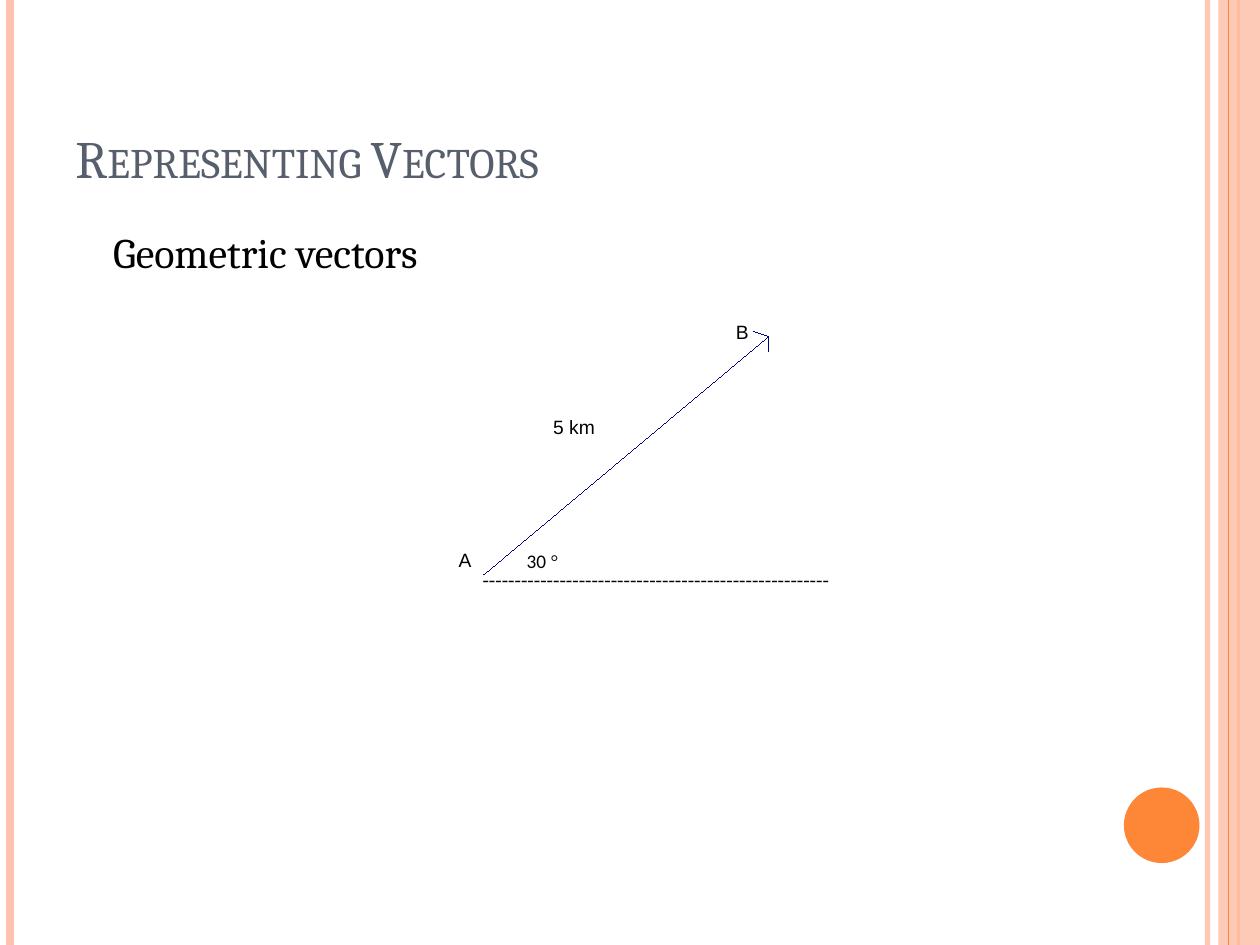
"""Build the slide on geometric vectors."""
from dataclasses import dataclass

from lxml import etree
from pptx import Presentation
from pptx.dml.color import RGBColor
from pptx.enum.shapes import MSO_CONNECTOR, MSO_SHAPE
from pptx.enum.text import MSO_ANCHOR
from pptx.oxml.ns import qn
from pptx.util import Inches, Pt

STRAIGHT = MSO_CONNECTOR.STRAIGHT
RECTANGLE, OVAL = MSO_SHAPE.RECTANGLE, MSO_SHAPE.OVAL
TOP, BOTTOM = MSO_ANCHOR.TOP, MSO_ANCHOR.BOTTOM

CELL = Inches(0.1)
COLUMNS, ROWS = 100, 75
HAIRLINE = 0.01
PEACH, ORANGE, NAVY, SLATE, BLACK = "FEC3AE", "FE8637", "000080", "575F6D", "000000"
ARROW_TAIL, ARROW_TIP = (38.4, 45.6), (61, 26.7)
BARB_ENDS = ((59.8, 26.3), (61, 27.9))


@dataclass
class Stripe:
    column: float
    color: str
    width: float
    opacity: int = 100


@dataclass
class Label:
    box: tuple[float, float, float, float]
    runs: tuple[tuple[str, str], ...]
    size: float = 11
    color: str = BLACK
    anchor: int = TOP
    framed: bool = False
    small_caps: bool = False
    indent: float = 0
    space_before: float = 0


BACK_STRIPES = (
    Stripe(95.83, PEACH, 3, 93),
    Stripe(0.83, PEACH, 4.5),
    Stripe(98.3, ORANGE, 1.5),
)
FRONT_STRIPE = Stripe(97.5, ORANGE, 0.75)
LABELS = (
    Label((43.9, 33, 5, 3.4), (("5 km", "Arial"),)),
    Label((58.4, 25.4, 2, 3.4), (("B", "Arial"),)),
    Label((36.4, 43.5, 2, 3.4), (("A", "Arial"),)),
    Label((41.8, 43.6, 5, 5), (("30 ", "Calibri"), ("°", "Times New Roman"))),
    Label((38.3, 45, 30, 5), (("-" * 54, "Times New Roman"),)),
    Label((5, 3, 81.7, 12.5), (("Representing Vectors", "Cambria"),), 30, SLATE,
          BOTTOM, framed=True, small_caps=True),
    Label((5, 17.5, 81.7, 53.3), (("Geometric vectors", "Cambria"),), 24,
          framed=True, indent=3, space_before=6),
)


def grid(*cells: float) -> list[int]:
    """Convert grid cells to slide lengths."""
    return [int(cell * CELL) for cell in cells]


def paint(target, color: str, opacity: int = 100) -> None:
    """Give a fill a solid colour and opacity."""
    target.solid()
    target.fore_color.rgb = RGBColor.from_string(color)
    if opacity < 100:
        tint = target._xPr.find(".//" + qn("a:srgbClr"))
        etree.SubElement(tint, qn("a:alpha"), val=str(opacity * 1000))


def draw_line(slide, start: tuple, end: tuple, color: str, width: float,
              opacity: int = 100) -> None:
    """Draw a straight line without a shadow."""
    line = slide.shapes.add_connector(STRAIGHT, *grid(*start, *end))
    line.line.width = Pt(width)
    paint(line.line.fill, color, opacity)
    etree.SubElement(line._element.spPr, qn("a:effectLst"))


def draw_stripe(slide, stripe: Stripe) -> None:
    """Draw a line over the full slide height."""
    draw_line(slide, (stripe.column, 0), (stripe.column, ROWS),
              stripe.color, stripe.width, stripe.opacity)


def draw_shape(slide, kind: int, box: tuple, color: str, opacity: int = 100) -> None:
    """Draw a filled shape without an outline."""
    shape = slide.shapes.add_shape(kind, *grid(*box))
    shape.shadow.inherit = False
    shape.line.fill.background()
    paint(shape.fill, color, opacity)


def draw_label(slide, label: Label) -> None:
    """Write one paragraph in a text box."""
    frame = slide.shapes.add_textbox(*grid(*label.box)).text_frame
    frame.word_wrap = True
    frame.vertical_anchor = label.anchor
    if not label.framed:
        frame.margin_left = frame.margin_right = frame.margin_top = frame.margin_bottom = 0
    paragraph = frame.paragraphs[0]
    paragraph.space_before = Pt(label.space_before)
    paragraph.font.size = Pt(label.size)
    paragraph.font.color.rgb = RGBColor.from_string(label.color)
    if label.indent:
        paragraph._p.get_or_add_pPr().set("marL", str(grid(label.indent)[0]))
    if len(label.runs) == 1:
        paragraph.font.name = label.runs[0][1]
    for text, font_name in label.runs:
        run = paragraph.add_run()
        run.text = text
        if len(label.runs) > 1:
            run.font.name = font_name
        if label.small_caps:
            run._r.get_or_add_rPr().set("cap", "small")


def main() -> None:
    """Assemble and save the presentation."""
    presentation = Presentation()
    presentation.slide_width, presentation.slide_height = grid(COLUMNS, ROWS)
    slide = presentation.slides.add_slide(presentation.slide_layouts[6])
    for stripe in BACK_STRIPES:
        draw_stripe(slide, stripe)
    draw_shape(slide, RECTANGLE, (96.7, 0, 3.3, ROWS), PEACH, 87)
    draw_stripe(slide, FRONT_STRIPE)
    draw_shape(slide, OVAL, (89.2, 62.5, 6, 6), ORANGE)
    for end in (ARROW_TAIL, *BARB_ENDS):
        draw_line(slide, ARROW_TIP, end, NAVY, HAIRLINE)
    for label in LABELS:
        draw_label(slide, label)
    presentation.save("out.pptx")


if __name__ == "__main__":
    main()
